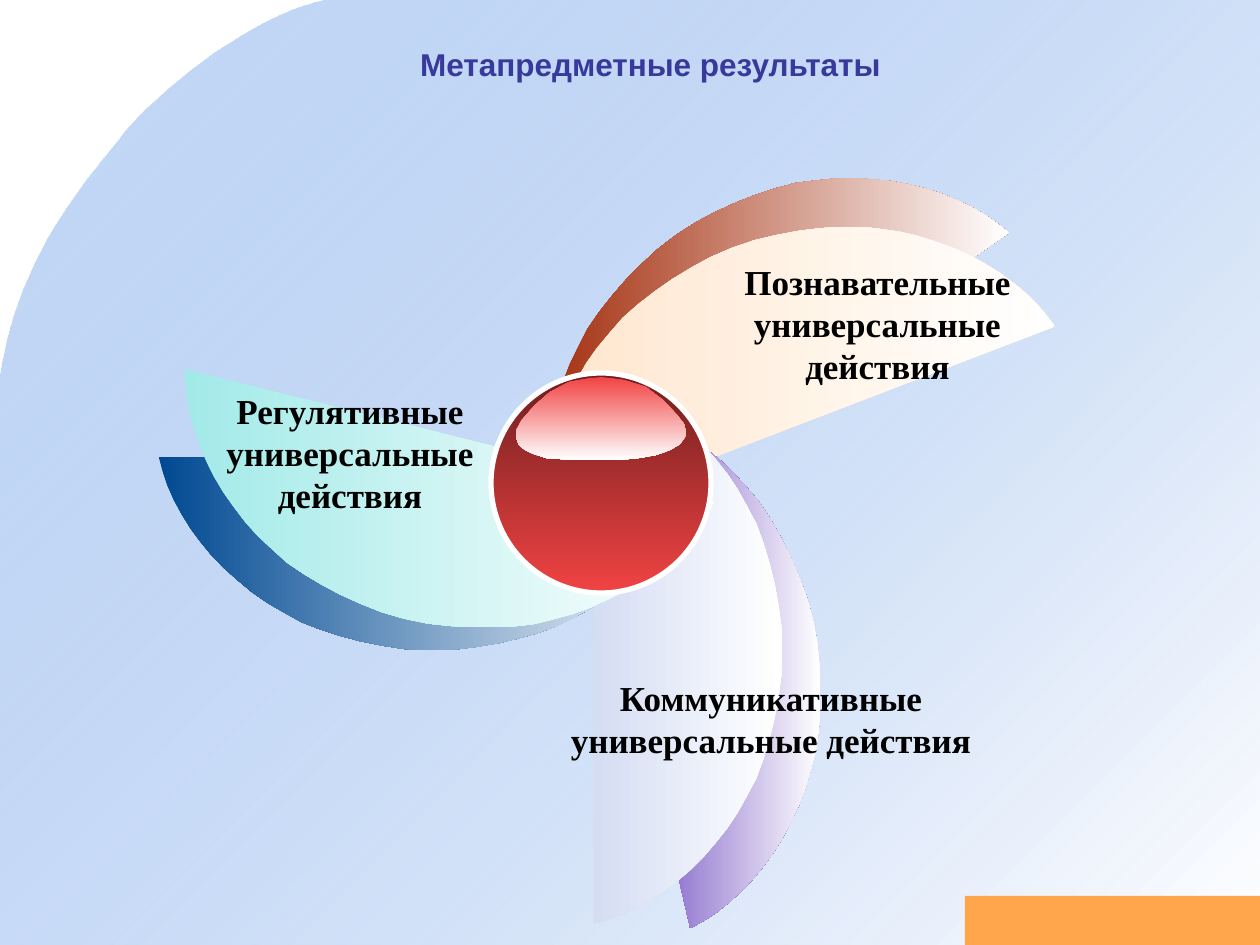
from math import cos, radians, sin

from lxml import etree
from pptx import Presentation
from pptx.dml.color import RGBColor
from pptx.enum.shapes import MSO_SHAPE
from pptx.enum.text import MSO_ANCHOR, MSO_AUTO_SIZE, PP_ALIGN
from pptx.oxml.ns import qn
from pptx.util import Pt

PX = 914400 / 126
WIDE, HIGH = 1260, 945
OVAL, RECT = MSO_SHAPE.OVAL, MSO_SHAPE.RECTANGLE
CENTER, TOP, FIXED = PP_ALIGN.CENTER, MSO_ANCHOR.TOP, MSO_AUTO_SIZE.NONE

# Upper half of a petal's curved edge; the lower half mirrors it
ARC = [(0, 0), (14, 4), (28, 9), (43, 16), (57, 24), (71, 33), (84, 43),
       (97, 54), (110, 67), (122, 81), (134, 96), (144, 111), (154, 129),
       (163, 146), (170, 165), (176, 185), (181, 205), (185, 227),
       (188, 249), (189, 273)]
PETAL_W, PETAL_H = 189, 546
EDGE = ARC + [(x, PETAL_H - y) for x, y in ARC[-2::-1]]

GLOSS = [(168, 47), (170, 55), (169, 60), (164, 67), (154, 73), (140, 78),
         (123, 81), (102, 83), (60, 83), (44, 82), (30, 81), (18, 77),
         (9, 73), (3, 68), (0, 60), (1, 52), (6, 43), (19, 28), (34, 15),
         (53, 5), (74, 1), (86, 0), (108, 3), (130, 10), (147, 23), (161, 38)]

# Centre x, centre y, clockwise turn, start colour
PETALS = [(731, 312, 235, "A43010"), (766, 336, 249, "FFE6CD"),
          (721, 641, 347, "4516AE"), (430, 556, 91, "004992"),
          (688, 651, 0, "D5DDF3"), (427, 527, 104, "A2EAE8")]

LABELS = [((669, 254, 417, 140), "Познавательные универсальные действия"),
          ((164, 383, 372, 140), "Регулятивные универсальные действия"),
          ((533, 670, 476, 140), "Коммуникативные универсальные действия")]


def emu(*vals):
    return [round(v * PX) for v in vals]


def rgb(code):
    return RGBColor.from_string(code)


def shade(shape, first, last, turn=0):
    """Fill with a two-colour gradient, turned clockwise in degrees."""
    fill = shape.fill
    fill.gradient()
    fill.gradient_angle = -turn % 360
    for stop, code in zip(fill.gradient_stops, (first, last)):
        stop.color.rgb = rgb(code)


def outline(slide, points):
    start, *rest = [emu(x, y) for x, y in points]
    pen = slide.shapes.build_freeform(*start)
    pen.add_line_segments(rest)
    shape = pen.convert_to_shape()
    shape.shadow.inherit = False
    shape.line.fill.background()
    return shape


def curve(a, b, c, d, steps=24):
    """Points of a cubic curve, without its first one."""
    for i in range(1, steps + 1):
        t = i / steps
        u = 1 - t
        yield tuple(u**3 * p + 3 * u * u * t * q + 3 * u * t * t * r + t**3 * s
                    for p, q, r, s in zip(a, b, c, d))


def backdrop(slide):
    top, bend, left = (325, 0), (123, 135), (0, 379)
    points = [top, *curve(top, (239, 20), (146, 105), bend),
              *curve(bend, (101, 166), (20, 244), left),
              (0, HIGH), (WIDE, HIGH), (WIDE, 0)]
    shape = outline(slide, points)
    shade(shape, "699DE9", "FFFFFF", 45)
    tint = next(shape._element.iter(qn("a:gs")))[0]
    etree.SubElement(tint, qn("a:alpha"), val="39000")


def petal(slide, mid_x, mid_y, turn, code):
    c, s = cos(radians(turn)), sin(radians(turn))
    points = []
    for x, y in EDGE:
        dx, dy = x - PETAL_W / 2, y - PETAL_H / 2
        points.append((mid_x + dx * c - dy * s, mid_y + dx * s + dy * c))
    shade(outline(slide, points), code, "FFFFFF")


def ball(slide, left, top, size):
    disc = slide.shapes.add_shape(OVAL, *emu(left, top, size, size))
    disc.shadow.inherit = False
    shade(disc, "6E1E1E", "F14343", 90)
    disc.line.color.rgb = rgb("FFFFFF")
    disc.line.width = Pt(3)
    shine = outline(slide, [(left + 25 + x, top + 4 + y) for x, y in GLOSS])
    shade(shine, "F14343", "FFFFFF", 90)


def write(shape, text, face, size, code):
    frame = shape.text_frame
    frame.word_wrap = True
    frame.auto_size = FIXED
    frame.vertical_anchor = TOP
    frame.text = text
    para = frame.paragraphs[0]
    para.alignment = CENTER
    font = para.font
    font.name, font.size, font.bold = face, Pt(size), True
    font.color.rgb = rgb(code)


def heading(slide, box, text):
    title = slide.shapes.title
    title.left, title.top, title.width, title.height = emu(*box)
    write(title, text, "Arial", 18, "37399B")
    slide.shapes._spTree.append(title._element)


def footer(slide, box):
    bar = slide.shapes.add_shape(RECT, *emu(*box))
    bar.shadow.inherit = False
    bar.fill.solid()
    bar.fill.fore_color.rgb = rgb("FFA54B")
    bar.line.fill.background()


def main():
    deck = Presentation()
    deck.slide_width, deck.slide_height = emu(WIDE, HIGH)
    slide = deck.slides.add_slide(deck.slide_layouts[5])
    backdrop(slide)
    for item in PETALS:
        petal(slide, *item)
    ball(slide, 491, 373, 220)
    for box, text in LABELS:
        label = slide.shapes.add_textbox(*emu(*box))
        write(label, text, "Times New Roman", 20, "000000")
    heading(slide, (217, 39, 867, 52), "Метапредметные результаты")
    footer(slide, (965, 896, 295, 49))
    deck.save("out.pptx")


if __name__ == "__main__":
    main()
